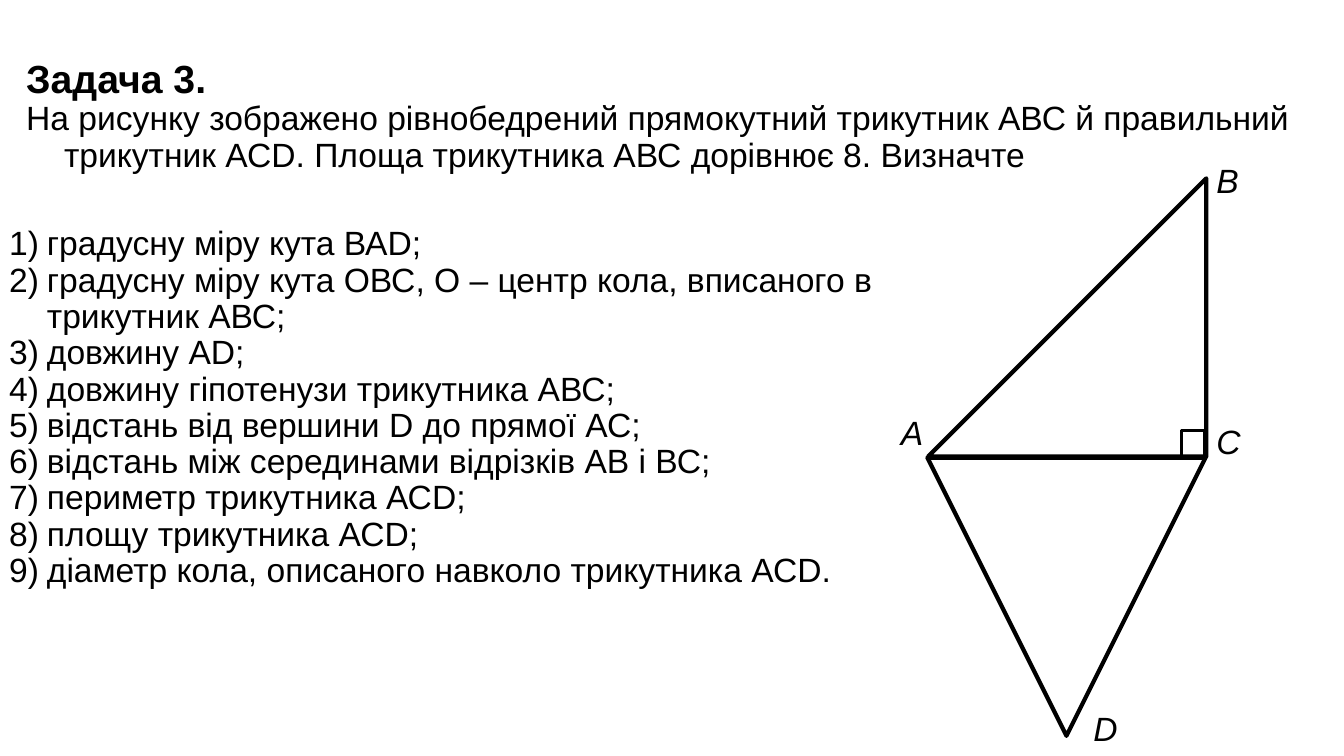
import pptx
import pptx.util
import pptx.dml.color
import pptx.enum.shapes
import pptx.enum.text
import lxml.etree
from pptx.oxml.ns import qn

Pt = pptx.util.Pt
Shapes = pptx.enum.shapes.MSO_SHAPE
BLACK = pptx.dml.color.RGBColor(0, 0, 0)
INDENT = 27

HEADING = "Задача 3."
TASK = ("На рисунку зображено рівнобедрений прямокутний трикутник АВС й правильний "
        "трикутник АСD. Площа трикутника АВС дорівнює 8. Визначте")
QUESTIONS = [
    "градусну міру кута ВАD;",
    "градусну міру кута ОВС, О – центр кола, вписаного в трикутник АВС;",
    "довжину АD;",
    "довжину гіпотенузи трикутника АВС;",
    "відстань від вершини D до прямої АС;",
    "відстань між серединами відрізків АВ і ВС;",
    "периметр трикутника АСD;",
    "площу трикутника АСD;",
    "діаметр кола, описаного навколо трикутника АСD.",
]
VERTICES = [("А", 636.5, 293.8), ("В", 861.8, 113.8), ("С", 861.8, 300.2), ("D", 774, 505.4)]
FIGURES = [
    (Shapes.RIGHT_TRIANGLE, 663, 127.4, 198.7, 198.7, 270, 3),
    (Shapes.ISOSCELES_TRIANGLE, 662.4, 326.9, 198.7, 198.7, 180, 3),
    (Shapes.RECTANGLE, 843.8, 307.4, 16.6, 18.7, 0, 2),
]


def place(box, left, top, width, height):
    box.left, box.top, box.width, box.height = Pt(left), Pt(top), Pt(width), Pt(height)
    box.text_frame.auto_size = pptx.enum.text.MSO_AUTO_SIZE.NONE
    box.text_frame.word_wrap = True
    box.text_frame.vertical_anchor = pptx.enum.text.MSO_ANCHOR.BOTTOM


def write(para, text, size=24, bold=False, italic=False):
    para.alignment = pptx.enum.text.PP_ALIGN.LEFT
    para.line_spacing = 0.9
    para.space_before = Pt(0)
    span = para.add_run()
    span.text = text
    span.font.name = "Arial"
    span.font.size = Pt(size)
    span.font.bold = bold
    span.font.italic = italic
    span.font.color.rgb = BLACK


deck = pptx.Presentation()
deck.slide_width, deck.slide_height = Pt(960), Pt(540)
page = deck.slides.add_slide(deck.slide_layouts[1])

title = page.shapes.title
place(title, 11.5, 18, 931.7, 110.2)
for number, (text, size, bold) in enumerate([(HEADING, 28, True), (TASK, 24, False)]):
    para = title.text_frame.add_paragraph() if number else title.text_frame.paragraphs[0]
    properties = para._p.get_or_add_pPr()
    properties.set("marL", str(Pt(INDENT)))
    properties.set("indent", str(-Pt(INDENT)))
    write(para, text, size, bold)

questions = page.placeholders[1]
place(questions, -0.7, 141.8, 663.1, 283)
for number, text in enumerate(QUESTIONS):
    para = questions.text_frame.add_paragraph() if number else questions.text_frame.paragraphs[0]
    properties = para._p.get_or_add_pPr()
    properties.set("marL", str(Pt(INDENT)))
    properties.set("indent", str(-Pt(INDENT)))
    lxml.etree.SubElement(properties, qn("a:buFont"), typeface="Arial")
    lxml.etree.SubElement(properties, qn("a:buAutoNum"), type="arabicParenR")
    write(para, text)

for kind, left, top, width, height, angle, weight in FIGURES:
    figure = page.shapes.add_shape(kind, Pt(left), Pt(top), Pt(width), Pt(height))
    figure.rotation = angle
    figure.shadow.inherit = False
    figure.fill.background()
    figure.line.color.rgb = BLACK
    figure.line.width = Pt(weight)

for letter, left, top in VERTICES:
    label = page.shapes.add_textbox(Pt(left), Pt(top), Pt(41), Pt(27.4))
    label.text_frame.word_wrap = True
    write(label.text_frame.paragraphs[0], letter, italic=True)

deck.save("out.pptx")
